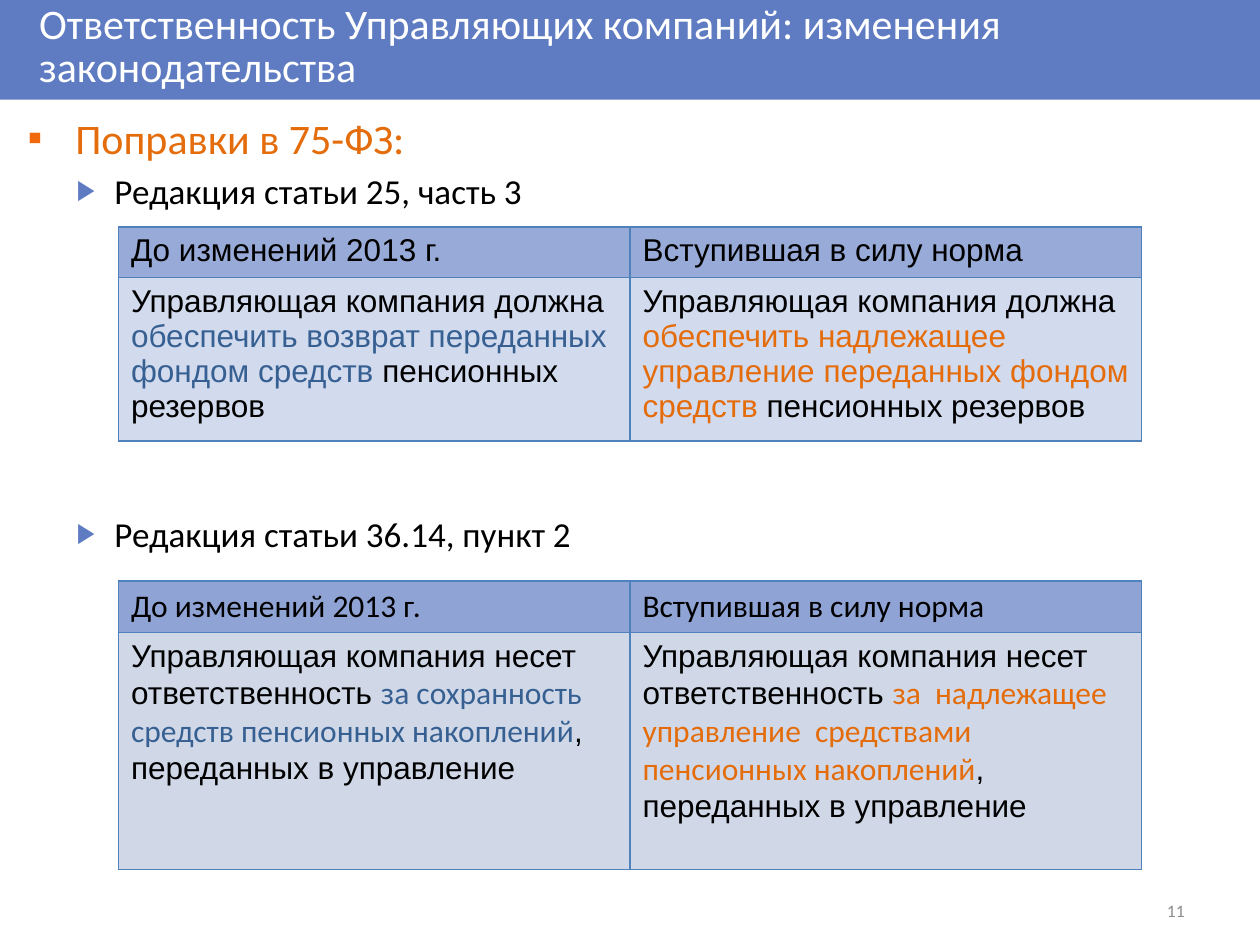
"""Build the slide comparing management company liability before and after the 2013 changes."""
from lxml import etree
from pptx import Presentation
from pptx.dml.color import RGBColor
from pptx.enum.shapes import MSO_SHAPE
from pptx.enum.text import MSO_ANCHOR, PP_ALIGN
from pptx.oxml.ns import qn
from pptx.util import Inches, Pt

RECTANGLE = MSO_SHAPE.RECTANGLE
MIDDLE = MSO_ANCHOR.MIDDLE
LEFT, RIGHT = PP_ALIGN.LEFT, PP_ALIGN.RIGHT

WHITE = RGBColor(0xFF, 0xFF, 0xFF)
BLACK = RGBColor(0x00, 0x00, 0x00)
GRAY = RGBColor(0x8C, 0x8C, 0x8C)
BAND_BLUE = RGBColor(0x5F, 0x7C, 0xC3)
OLD_BLUE = RGBColor(0x37, 0x60, 0x92)
NEW_ORANGE = RGBColor(0xE4, 0x6C, 0x0A)
BULLET_ORANGE = RGBColor(0xF0, 0x69, 0x0A)
BORDER_BLUE = RGBColor(0x4F, 0x81, 0xBD)

TITLE = "Ответственность Управляющих компаний: изменения законодательства"
PAGE_NUMBER = "11"

HEADING = {"level": 0, "size": 24, "color": NEW_ORANGE, "margin": 0.38, "hanging": 0.38,
           "bullet": "▪", "bullet_color": BULLET_ORANGE, "bullet_size": 100}
ARTICLE = {"level": 1, "size": 20, "color": BLACK, "margin": 0.69, "hanging": 0.3,
           "bullet": "▶", "bullet_color": BAND_BLUE, "bullet_size": 80}
OUTLINE = [
    ("Поправки в 75-ФЗ:", HEADING, 0),
    ("Редакция статьи 25, часть 3", ARTICLE, 4),
    ("Редакция статьи 36.14, пункт 2", ARTICLE, 172),
]

HEADERS = ["До изменений 2013 г.", "Вступившая в силу норма"]
TABLES = [
    {
        "top": 1.8, "heights": [0.38, 1.22], "accent_font": "Arial",
        "fills": [RGBColor(0x98, 0xAA, 0xD8), RGBColor(0xD2, 0xDA, 0xEE)],
        "norms": [
            ("Управляющая компания должна ",
             "обеспечить возврат переданных фондом средств ",
             "пенсионных резервов"),
            ("Управляющая компания должна ",
             "обеспечить надлежащее управление переданных фондом средств ",
             "пенсионных резервов"),
        ],
    },
    {
        "top": 4.61, "heights": [0.41, 1.88], "accent_font": "Calibri",
        "fills": [RGBColor(0x8F, 0xA3, 0xD5), RGBColor(0xD0, 0xD8, 0xE8)],
        "norms": [
            ("Управляющая компания несет ответственность ",
             "за сохранность средств пенсионных накоплений",
             ", переданных в управление"),
            ("Управляющая компания несет ответственность ",
             "за  надлежащее управление  средствами пенсионных накоплений",
             ", переданных в управление"),
        ],
    },
]
TABLE_LEFT, COLUMN_WIDTH = 0.94, 4.06


def apply_format(target, values):
    for name, value in values.items():
        setattr(target, name, value)


def add_run(paragraph, text, size, color, font_name="Calibri"):
    run = paragraph.add_run()
    run.text = text
    apply_format(run.font, {"size": Pt(size), "name": font_name, "bold": False})
    run.font.color.rgb = color


def add_text_box(slide, left, top, width, height):
    box = slide.shapes.add_textbox(Inches(left), Inches(top), Inches(width), Inches(height))
    box.text_frame.word_wrap = True
    return box.text_frame


def set_bullet(paragraph, style):
    properties = paragraph._p.get_or_add_pPr()
    properties.set("marL", str(Inches(style["margin"])))
    properties.set("indent", str(-Inches(style["hanging"])))
    color = etree.SubElement(properties, qn("a:buClr"))
    etree.SubElement(color, qn("a:srgbClr"), val=str(style["bullet_color"]))
    etree.SubElement(properties, qn("a:buSzPct"), val=str(style["bullet_size"] * 1000))
    etree.SubElement(properties, qn("a:buFont"), typeface="Arial")
    etree.SubElement(properties, qn("a:buChar"), char=style["bullet"])


def set_borders(cell):
    properties = cell._tc.get_or_add_tcPr()
    for position, side in enumerate(("a:lnL", "a:lnR", "a:lnT", "a:lnB")):
        line = etree.Element(qn(side), w=str(Pt(1)))
        fill = etree.SubElement(line, qn("a:solidFill"))
        etree.SubElement(fill, qn("a:srgbClr"), val=str(BORDER_BLUE))
        properties.insert(position, line)


def add_title(slide):
    title = slide.shapes.title
    band = slide.shapes.add_shape(RECTANGLE, 0, 0, Inches(10), Inches(0.79))
    band.shadow.inherit = False
    band.fill.solid()
    band.fill.fore_color.rgb = BAND_BLUE
    band.line.fill.background()
    title.element.addprevious(band.element)
    apply_format(title, {"left": Inches(0.27), "top": Inches(-0.01),
                         "width": Inches(8.66), "height": Inches(0.79)})
    margins = dict.fromkeys(
        ("margin_left", "margin_top", "margin_right", "margin_bottom"), Inches(0.04))
    apply_format(title.text_frame, {"word_wrap": True, "vertical_anchor": MIDDLE, **margins})
    paragraph = title.text_frame.paragraphs[0]
    apply_format(paragraph, {"alignment": LEFT, "line_spacing": 0.85})
    add_run(paragraph, TITLE, 24, WHITE)


def add_outline(slide):
    frame = add_text_box(slide, 0.12, 0.84, 9.72, 6.27)
    for index, (text, style, space_before) in enumerate(OUTLINE):
        paragraph = frame.add_paragraph() if index else frame.paragraphs[0]
        set_bullet(paragraph, style)
        paragraph.level = style["level"]
        if space_before:
            paragraph.space_before = Pt(space_before)
        add_run(paragraph, text, style["size"], style["color"])


def add_comparison(slide, content):
    heights = content["heights"]
    table = slide.shapes.add_table(
        2, 2, Inches(TABLE_LEFT), Inches(content["top"]),
        Inches(2 * COLUMN_WIDTH), Inches(sum(heights))).table
    apply_format(table, {"first_row": False, "horz_banding": False})
    for row, height in zip(table.rows, heights):
        row.height = Inches(height)
    accent_font = content["accent_font"]
    for column, accent in enumerate((OLD_BLUE, NEW_ORANGE)):
        table.columns[column].width = Inches(COLUMN_WIDTH)
        before, changed, after = content["norms"][column]
        cell_runs = [
            [(HEADERS[column], BLACK, accent_font)],
            [(before, BLACK, "Arial"), (changed, accent, accent_font), (after, BLACK, "Arial")],
        ]
        for row, runs in enumerate(cell_runs):
            cell = table.cell(row, column)
            cell.fill.solid()
            cell.fill.fore_color.rgb = content["fills"][row]
            set_borders(cell)
            for text, color, font_name in runs:
                add_run(cell.text_frame.paragraphs[0], text, 18, color, font_name)


def add_page_number(slide):
    frame = add_text_box(slide, 9.06, 7.11, 0.44, 0.24)
    frame.vertical_anchor = MIDDLE
    paragraph = frame.paragraphs[0]
    paragraph.alignment = RIGHT
    add_run(paragraph, PAGE_NUMBER, 10, GRAY)


def main():
    presentation = Presentation()
    presentation.slide_width, presentation.slide_height = Inches(10), Inches(7.5)
    slide = presentation.slides.add_slide(presentation.slide_layouts[5])
    add_title(slide)
    add_page_number(slide)
    add_outline(slide)
    for content in TABLES:
        add_comparison(slide, content)
    presentation.save("out.pptx")


if __name__ == "__main__":
    main()
